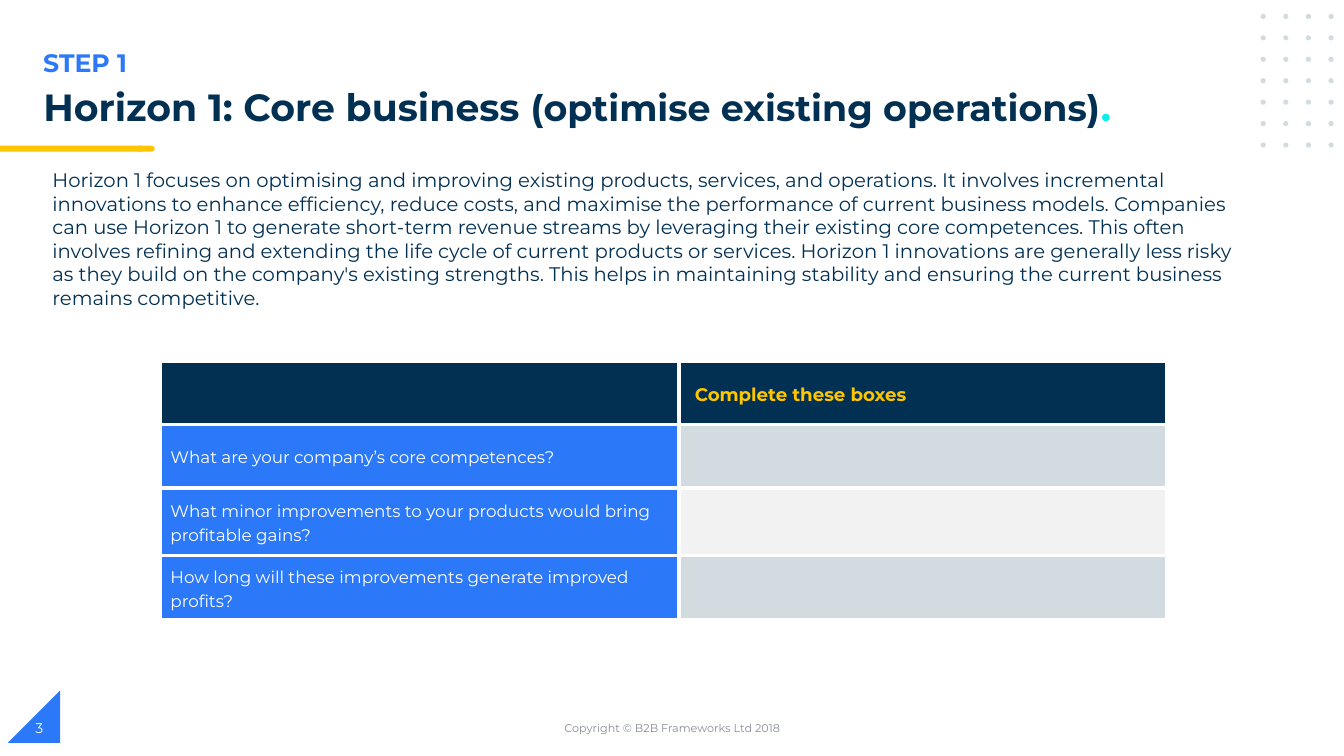
from lxml import etree
from pptx import Presentation, util as u
from pptx.dml.color import RGBColor
from pptx.enum import shapes as s, text as t
from pptx.oxml.ns import qn

NAVY, BLUE, GOLD, GREY = "023053", "2B79F8", "FFC600", "D1DBE0"
WHITE, PALE, AQUA, SLATE = "FFFFFF", "F2F2F2", "0EECEC", "888C97"

TITLE = [
    ("Horizon 1: Core business", 27, NAVY),
    (" ", 28, NAVY),
    ("(optimise existing operations)", 26, NAVY),
    (".", 28, AQUA),
]
INTRO = (
    "Horizon 1 focuses on optimising and improving existing products, services, "
    "and operations. It involves incremental innovations to enhance efficiency, "
    "reduce costs, and maximise the performance of current business models. "
    "Companies can use Horizon 1 to generate short-term revenue streams by "
    "leveraging their existing core competences. This often involves refining and "
    "extending the life cycle of current products or services. Horizon 1 "
    "innovations are generally less risky as they build on the company's existing "
    "strengths. This helps in maintaining stability and ensuring the current "
    "business remains competitive."
)
HEAD = "Complete these boxes"
ASKS = [
    "What are your company’s core competences?",
    "What minor improvements to your products would bring profitable gains?",
    "How long will these improvements generate improved profits?",
]
COLS = [13.08, 12.29]
ROWS = [1.6, 1.6, 1.7, 1.62]

# left, top, width, height in centimetres
TEXTS = [
    ((0.84, 1.07, 17, 1.02), "STEP 1", dict(size=18, color=BLUE, bold=True)),
    ((1.07, 4.11, 30.38, 3.86), INTRO, dict(size=14, color=NAVY)),
    ((11.23, 17.83, 11.43, 1.02), "Copyright © B2B Frameworks Ltd 2018",
     dict(size=8, color=SLATE, align=t.PP_ALIGN.CENTER, mid=True)),
    ((0.64, 17.83, 7.62, 1.02), "3", dict(size=10, color=WHITE, mid=True)),
]


def rgb(code):
    return RGBColor.from_string(code)


def write(frame, words, size=12, color=NAVY, bold=False, align=None, mid=False,
          space=None):
    """Fill a frame with one paragraph; words is a string or (text, size, colour) runs."""
    frame.word_wrap = True
    frame.vertical_anchor = t.MSO_ANCHOR.MIDDLE if mid else t.MSO_ANCHOR.TOP
    para = frame.paragraphs[0]
    para.alignment = align
    para.line_spacing = space
    runs = [(words, size, color)] if isinstance(words, str) else words
    for part, pts, tint in runs:
        run = para.add_run()
        run.text = part
        font = run.font
        font.name, font.size, font.bold = "Montserrat", u.Pt(pts), bold
        font.color.rgb = rgb(tint)


def shape(slide, kind, box, color):
    item = slide.shapes.add_shape(kind, *map(u.Cm, box))
    item.shadow.inherit = False
    item.fill.solid()
    item.fill.fore_color.rgb = rgb(color)
    item.line.fill.background()
    return item


def edge(cell, color, pts):
    """Draw all four borders of a cell; call before setting its fill."""
    props = cell._tc.get_or_add_tcPr()
    for side in ("a:lnL", "a:lnR", "a:lnT", "a:lnB"):
        line = etree.SubElement(props, qn(side), w=str(u.Pt(pts)))
        fill = etree.SubElement(line, qn("a:solidFill"))
        etree.SubElement(fill, qn("a:srgbClr"), val=color)


def decor(slide):
    kinds = s.MSO_SHAPE
    corner = shape(slide, kinds.RIGHT_TRIANGLE, (0.2, 17.4, 1.32, 1.32), BLUE)
    corner._element.spPr.get_or_add_xfrm().set("flipH", "1")
    shape(slide, kinds.FLOWCHART_TERMINATOR, (3.41, 3.67, 0.49, 0.15), GOLD)
    shape(slide, kinds.RECTANGLE, (0, 3.67, 3.59, 0.15), GOLD)
    for row in range(7):
        for col in range(4):
            spot = (31.77 + 0.57 * col, 0.35 + 0.54 * row, 0.13, 0.13)
            shape(slide, kinds.OVAL, spot, GREY)


def grid(slide):
    box = map(u.Cm, (4.04, 9.1, sum(COLS), sum(ROWS)))
    table = slide.shapes.add_table(len(ROWS), len(COLS), *box).table
    for col, wide in zip(table.columns, COLS):
        col.width = u.Cm(wide)
    for row, high in zip(table.rows, ROWS):
        row.height = u.Cm(high)
    fills = [(NAVY, NAVY), (BLUE, GREY), (BLUE, PALE), (BLUE, GREY)]
    for r, pair in enumerate(fills):
        for c, color in enumerate(pair):
            cell = table.cell(r, c)
            edge(cell, WHITE, 3)
            cell.fill.solid()
            cell.fill.fore_color.rgb = rgb(color)
            cell.margin_top = cell.margin_bottom = 0
            cell.vertical_anchor = t.MSO_ANCHOR.MIDDLE
    head = table.cell(0, 1)
    head.margin_left = u.Cm(0.39)
    write(head.text_frame, HEAD, size=13, color=GOLD, bold=True, mid=True, space=1.15)
    for r, ask in enumerate(ASKS, 1):
        write(table.cell(r, 0).text_frame, ask, color=WHITE, mid=True, space=1.15)


def main():
    deck = Presentation()
    deck.slide_width, deck.slide_height = u.Cm(33.87), u.Cm(19.05)
    slide = deck.slides.add_slide(deck.slide_layouts[5])
    decor(slide)
    title = slide.shapes.title
    title.left, title.top, title.width, title.height = map(
        u.Cm, (0.84, 2.08, 30.84, 1.02))
    title.text_frame.auto_size = t.MSO_AUTO_SIZE.NONE
    write(title.text_frame, TITLE, bold=True, align=t.PP_ALIGN.LEFT, space=0.9)
    for box, words, style in TEXTS:
        write(slide.shapes.add_textbox(*map(u.Cm, box)).text_frame, words, **style)
    grid(slide)
    deck.save("out.pptx")


if __name__ == "__main__":
    main()
